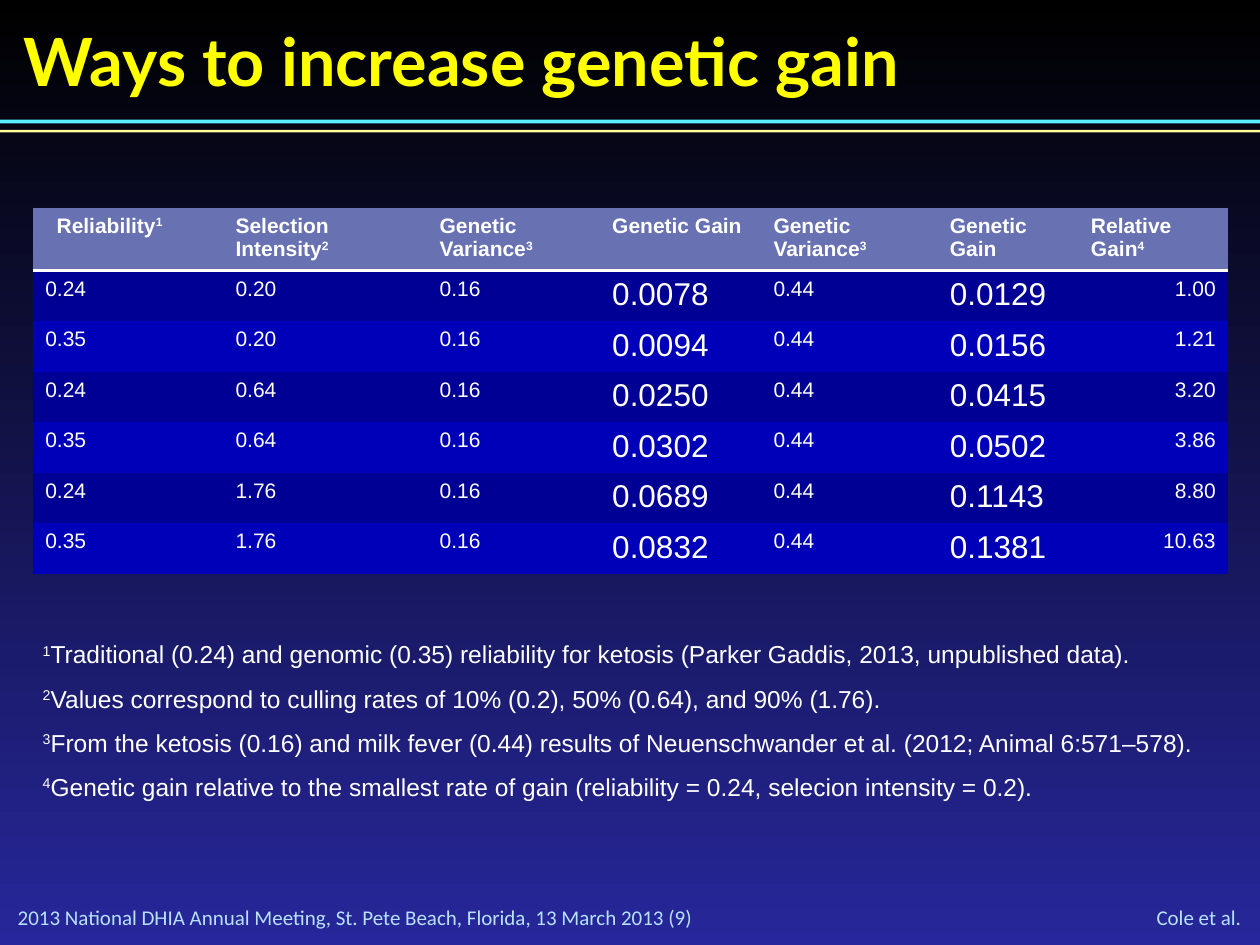
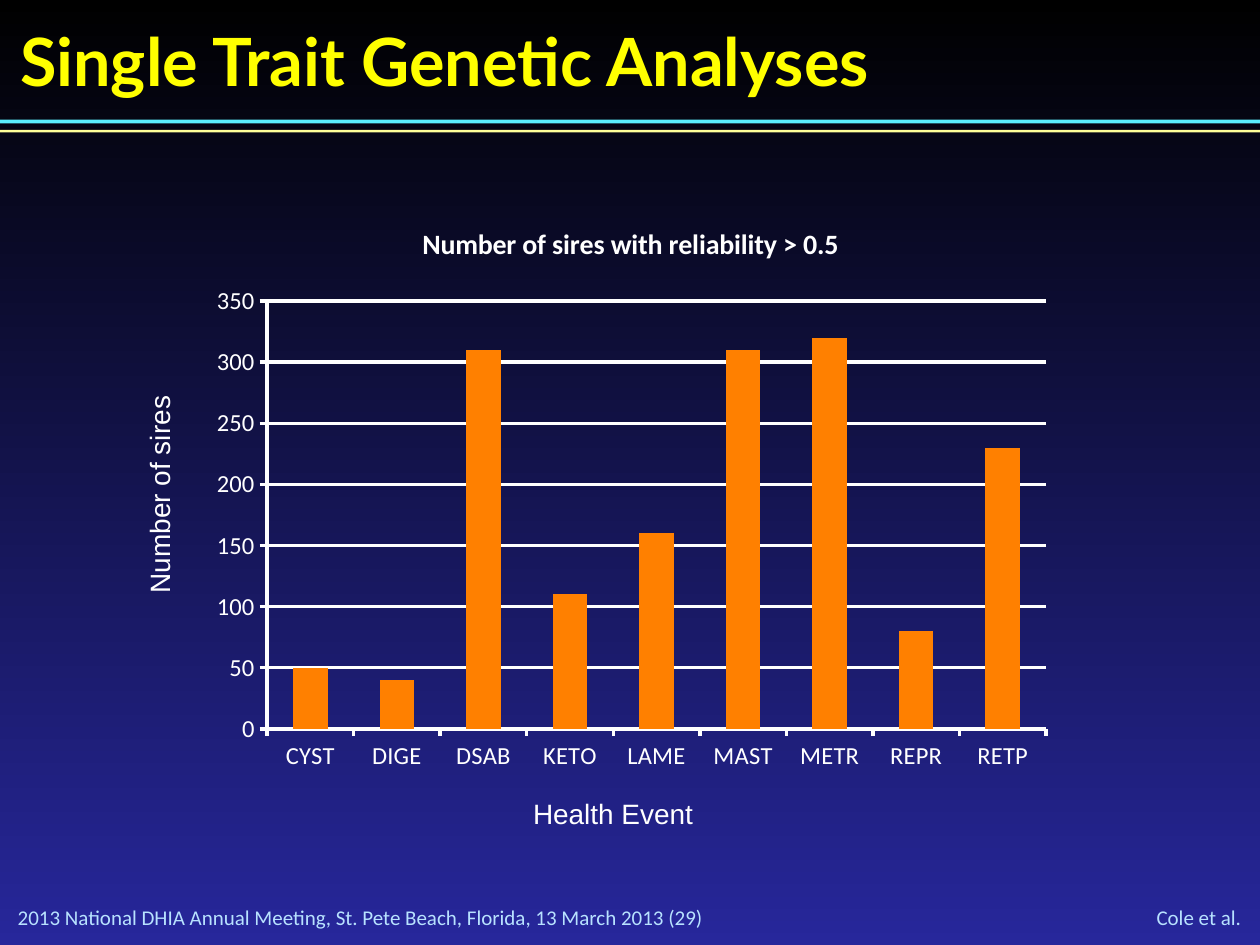
import pptx
import pptx.util
import pptx.dml.color
import pptx.enum.text
import pptx.enum.chart
import pptx.enum.shapes
import pptx.chart.data
import pptx.oxml

Inches = pptx.util.Inches
Pt = pptx.util.Pt
Align = pptx.enum.text.PP_ALIGN
Anchor = pptx.enum.text.MSO_ANCHOR


class Theme:
    black = "000000"
    navy = "27279B"
    white = "FFFFFF"
    yellow = "FFFF00"
    cyan = "5BEFFF"
    cream = "FFFF99"
    pale = "B8E2FF"
    orange = "FF8000"
    head = "6871B2"
    rows = ("000094", "0000B9")
    sans = "Arial"
    text = "Calibri"
    display = "Lato"
    title = 38
    gain = 18
    label = 16
    note = 14
    small = 12


def style(font, size, name, color, bold=False):
    font.size = Pt(size)
    font.name = name
    font.bold = bold
    font.color.rgb = pptx.dml.color.RGBColor.from_string(color)


def write(par, text, size, name, color, bold=False, sup=False):
    run = par.add_run()
    run.text = text
    style(run.font, size, name, color, bold)
    if sup:
        run._r.get_or_add_rPr().set("baseline", "30000")


hue = pptx.dml.color.RGBColor.from_string
deck = pptx.Presentation()
deck.slide_width = Inches(10)
deck.slide_height = Inches(7.5)

back = deck.slide_master.background.fill
back.gradient()
back.gradient_angle = 270
for stop, color, place in zip(back.gradient_stops, (Theme.black, Theme.navy), (0, 1)):
    stop.color.rgb = hue(color)
    stop.position = place

pages = []
for title, left, page in (
    ("Ways to increase genetic gain", 0.19, 9),
    ("Single Trait Genetic Analyses", 0.16, 29),
):
    slide = deck.slides.add_slide(deck.slide_layouts[5])
    pages.append(slide)

    for top, height, color in ((0.95, 0.03, Theme.cyan), (1.03, 0.02, Theme.cream)):
        band = slide.shapes.add_shape(
            pptx.enum.shapes.MSO_SHAPE.RECTANGLE,
            0, Inches(top), deck.slide_width, Inches(height))
        band.shadow.inherit = False
        band.fill.solid()
        band.fill.fore_color.rgb = hue(color)
        band.line.fill.background()

    meet = f"2013 National DHIA Annual Meeting, St. Pete Beach, Florida, 13 March 2013 ({page})"
    for text, x, y, width, height, align in (
        (meet, 0.14, 7.18, 5.78, 0.2, Align.LEFT),
        ("Cole et al.", 8.72, 7.17, 1.13, 0.21, Align.RIGHT),
    ):
        foot = slide.shapes.add_textbox(Inches(x), Inches(y), Inches(width), Inches(height))
        frame = foot.text_frame
        frame.word_wrap = True
        frame.vertical_anchor = Anchor.MIDDLE
        frame.margin_left = frame.margin_right = frame.margin_top = frame.margin_bottom = 0
        frame.paragraphs[0].alignment = align
        write(frame.paragraphs[0], text, Theme.small, Theme.text, Theme.pale)

    head = slide.shapes.title
    head.left, head.top = Inches(left), Inches(0.16)
    head.width, head.height = Inches(9), Inches(0.64)
    frame = head.text_frame
    frame.auto_size = pptx.enum.text.MSO_AUTO_SIZE.NONE
    frame.vertical_anchor = Anchor.TOP
    frame.margin_left = frame.margin_right = frame.margin_top = frame.margin_bottom = 0
    frame.paragraphs[0].alignment = Align.LEFT
    write(frame.paragraphs[0], title, Theme.title, Theme.display, Theme.yellow, True)

gains, sires = pages

heads = (
    ("Reliability", "1"), ("Selection Intensity", "2"), ("Genetic Variance", "3"),
    ("Genetic Gain", ""), ("Genetic Variance", "3"), ("Genetic Gain", ""),
    ("Relative Gain", "4"),
)
widths = (1.51, 1.62, 1.37, 1.28, 1.4, 1.12, 1.19)
data = (
    ("0.24", "0.20", "0.16", "0.0078", "0.44", "0.0129", "1.00"),
    ("0.35", "0.20", "0.16", "0.0094", "0.44", "0.0156", "1.21"),
    ("0.24", "0.64", "0.16", "0.0250", "0.44", "0.0415", "3.20"),
    ("0.35", "0.64", "0.16", "0.0302", "0.44", "0.0502", "3.86"),
    ("0.24", "1.76", "0.16", "0.0689", "0.44", "0.1143", "8.80"),
    ("0.35", "1.76", "0.16", "0.0832", "0.44", "0.1381", "10.63"),
)
table = gains.shapes.add_table(
    len(data) + 1, len(heads), Inches(0.26), Inches(1.65), Inches(9.49), Inches(2.87)).table
table.horz_banding = False
table._tbl.tblPr[0].text = "{2D5ABB26-0587-4C30-8999-92F81FD0307C}"
for col, width in zip(table.columns, widths):
    col.width = Inches(width)
for i, row in enumerate(table.rows):
    row.height = Inches(0.4 if i else 0.47)

rule = (
    '<a:lnB xmlns:a="http://schemas.openxmlformats.org/drawingml/2006/main" w="25400">'
    f'<a:solidFill><a:srgbClr val="{Theme.white}"/></a:solidFill></a:lnB>'
)
for j, (text, mark) in enumerate(heads):
    cell = table.cell(0, j)
    cell.fill.solid()
    cell.fill.fore_color.rgb = hue(Theme.head)
    cell._tc.get_or_add_tcPr().insert(0, pptx.oxml.parse_xml(rule))
    par = cell.text_frame.paragraphs[0]
    write(par, text, Theme.small, Theme.sans, Theme.white, True)
    if mark:
        write(par, mark, Theme.small, Theme.sans, Theme.white, True, True)
table.cell(0, 0).margin_left = Inches(0.19)

for i, row in enumerate(data):
    for j, text in enumerate(row):
        cell = table.cell(i + 1, j)
        cell.fill.solid()
        cell.fill.fore_color.rgb = hue(Theme.rows[i % 2])
        par = cell.text_frame.paragraphs[0]
        if j == len(row) - 1:
            par.alignment = Align.RIGHT
        size = Theme.gain if heads[j][0] == "Genetic Gain" else Theme.small
        write(par, text, size, Theme.sans, Theme.white)

notes = (
    "Traditional (0.24) and genomic (0.35) reliability for ketosis (Parker Gaddis, 2013, unpublished data).",
    "Values correspond to culling rates of 10% (0.2), 50% (0.64), and 90% (1.76).",
    "From the ketosis (0.16) and milk fever (0.44) results of Neuenschwander et al. (2012; Animal 6:571–578).",
    "Genetic gain relative to the smallest rate of gain (reliability = 0.24, selecion intensity = 0.2).",
)
frame = gains.shapes.add_textbox(Inches(0.24), Inches(4.91), Inches(9.51), Inches(1.5)).text_frame
frame.word_wrap = True
for i, text in enumerate(notes):
    par = frame.add_paragraph() if i else frame.paragraphs[0]
    par.line_spacing = 1.5
    write(par, str(i + 1), Theme.note, Theme.sans, Theme.white, sup=True)
    write(par, text, Theme.note, Theme.sans, Theme.white)

name = "Number of sires with reliability > 0.5"
stats = pptx.chart.data.CategoryChartData()
stats.categories = ("CYST", "DIGE", "DSAB", "KETO", "LAME", "MAST", "METR", "REPR", "RETP")
stats.add_series(name, (50, 40, 310, 110, 160, 310, 320, 80, 230))
chart = sires.shapes.add_chart(
    pptx.enum.chart.XL_CHART_TYPE.COLUMN_STACKED,
    Inches(1.57), Inches(1.6), Inches(6.87), Inches(4.65), stats).chart
style(chart.font, 10, Theme.text, Theme.white)
chart.has_legend = False
chart.has_title = True
write(chart.chart_title.text_frame.paragraphs[0], name,
      Theme.label, Theme.text, Theme.white, True)
chart.chart_title.include_in_layout = False

plot = chart.plots[0]
plot.gap_width = 150
plot.overlap = 100
plot.vary_by_categories = False
bars = plot.series[0].format.fill
bars.solid()
bars.fore_color.rgb = hue(Theme.orange)

vals = chart.value_axis
vals.minimum_scale = 0
vals.maximum_scale = 350
vals.major_unit = 50
vals.has_major_gridlines = True
for axis in (chart.category_axis, vals):
    axis.major_tick_mark = pptx.enum.chart.XL_TICK_MARK.OUTSIDE
    style(axis.tick_labels.font, Theme.note, Theme.text, Theme.white)
for line in (chart.category_axis.format.line, vals.format.line, vals.major_gridlines.format.line):
    line.width = Pt(2)
    line.color.rgb = hue(Theme.white)

area = chart._chartSpace.chart.plotArea
for old in area.findall(pptx.oxml.ns.qn("c:layout")):
    area.remove(old)
area.insert(0, pptx.oxml.parse_xml(
    '<c:layout xmlns:c="http://schemas.openxmlformats.org/drawingml/2006/chart"><c:manualLayout>'
    '<c:layoutTarget val="inner"/><c:xMode val="edge"/><c:yMode val="edge"/>'
    '<c:x val="0.08"/><c:y val="0.17"/><c:w val="0.9"/><c:h val="0.73"/>'
    '</c:manualLayout></c:layout>'))

for text, x, y, width, turn in (
    ("Health Event", 4.09, 6.27, 1.55, 0),
    ("Number of sires", 0.27, 3.74, 1.99, 270),
):
    box = sires.shapes.add_textbox(Inches(x), Inches(y), Inches(width), Inches(0.37))
    box.rotation = turn
    box.text_frame.word_wrap = True
    par = box.text_frame.paragraphs[0]
    par.alignment = Align.CENTER
    write(par, text, Theme.label, Theme.sans, Theme.white)

deck.save("out.pptx")
